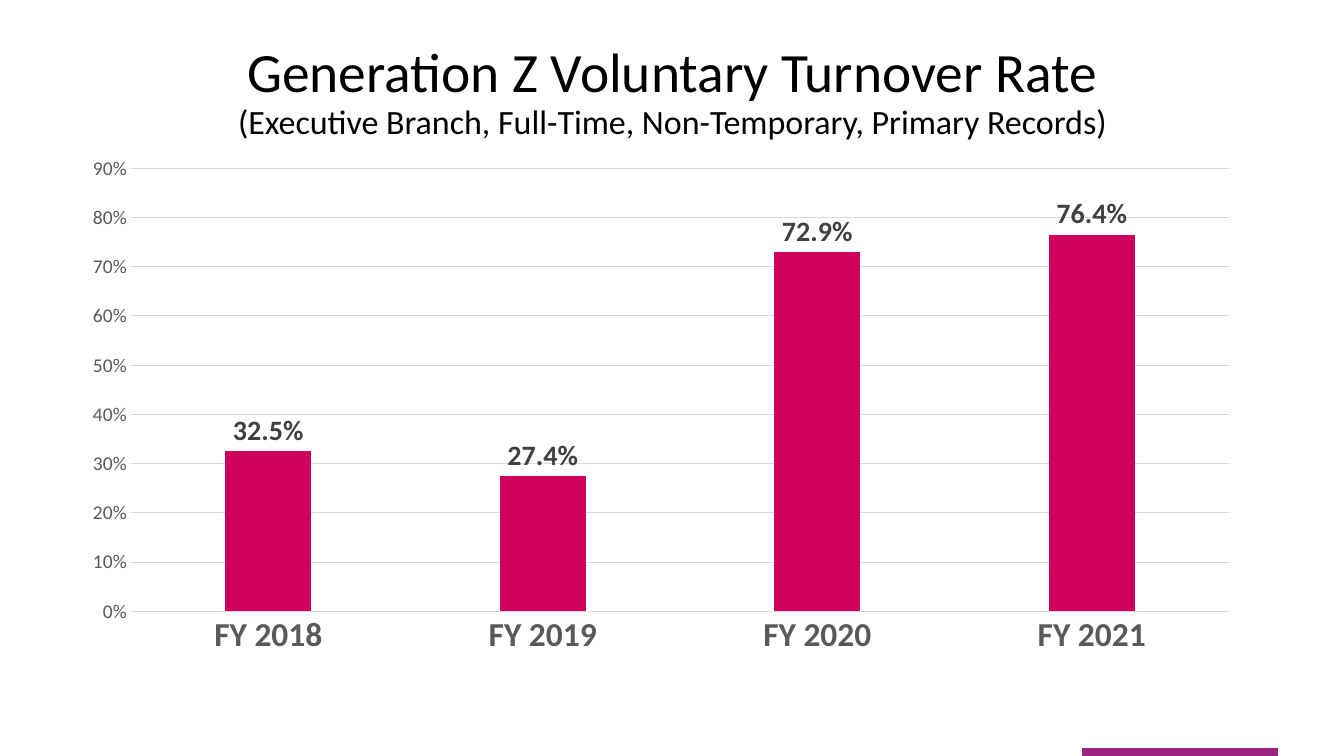
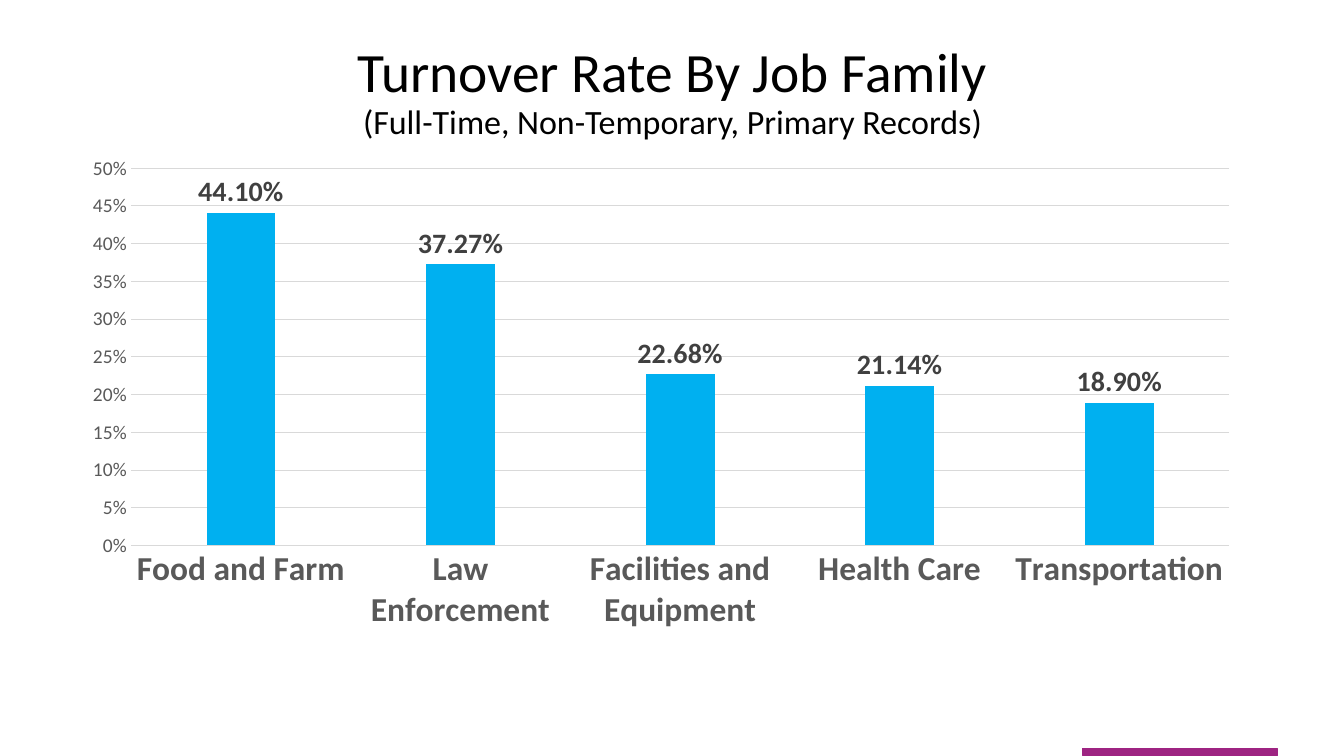
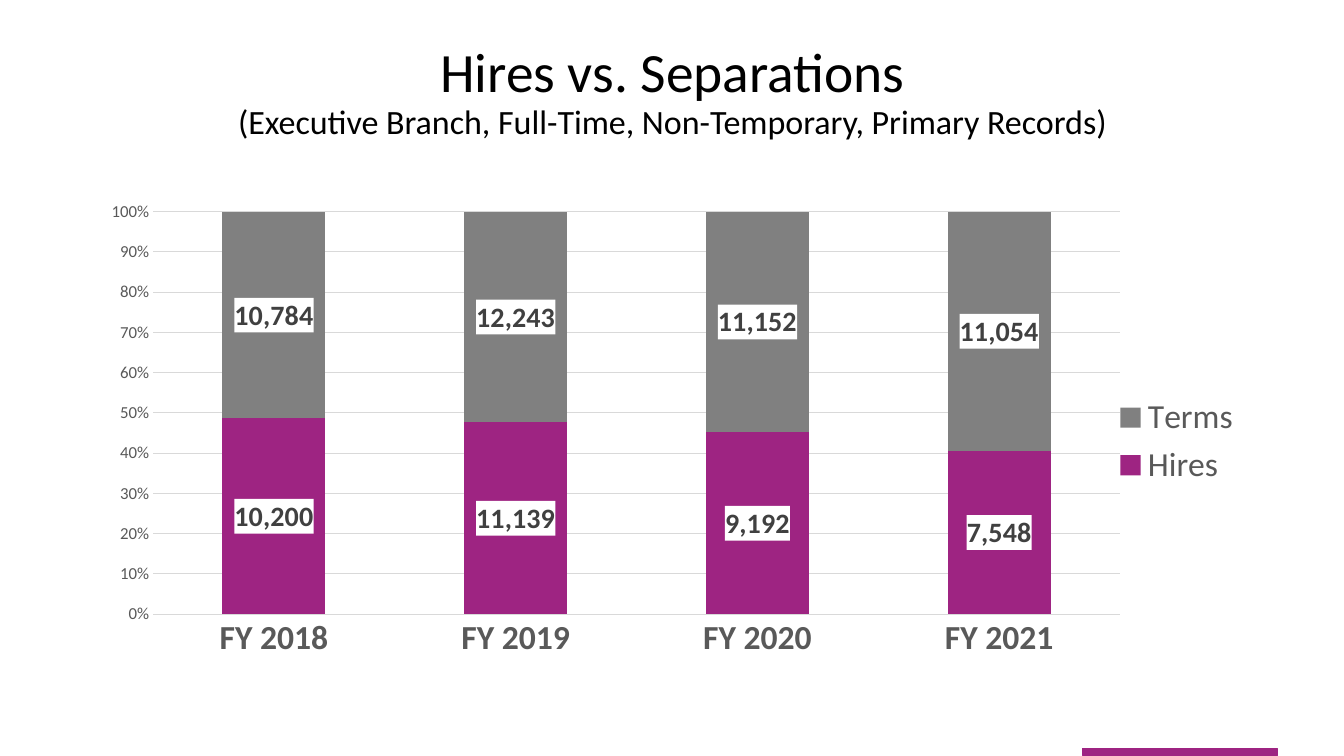
"""Build three turnover and hiring chart slides."""
from pptx import Presentation
from pptx.chart import data
from pptx.dml import color
from pptx.enum import chart as charts, shapes, text
from pptx.oxml import ns, parse_xml
from pptx.util import Inches, Pt

FONT = "Calibri"
BLACK = "000000"
WHITE = "FFFFFF"
PURPLE = "9E2482"
PINK = "CF005C"
BLUE = "00B0F0"
GRAY = "808080"
AXIS_TEXT = "595959"
LABEL_TEXT = "404040"
RULE = "D9D9D9"

ALL_RECORDS = "(Executive Branch, Full-Time, Non-Temporary, Primary Records)"
YEARS = [f"FY {year}" for year in range(2018, 2022)]
CLUSTERED = charts.XL_CHART_TYPE.COLUMN_CLUSTERED
STACKED = charts.XL_CHART_TYPE.COLUMN_STACKED_100

CHART_SLIDES = [
    dict(title="Generation Z Voluntary Turnover Rate", subtitle=ALL_RECORDS,
         kind=CLUSTERED, top=1.55, height=5.2, layout=(0.03, 0.02, 0.95, 0.848),
         categories=YEARS, series=[("Series 1", (0.325, 0.274, 0.729, 0.764), PINK)],
         label_format="0.0%", maximum=0.9, step=0.1, axis_size=14, gap=219, overlap=-27),
    dict(title="Turnover Rate By Job Family",
         subtitle="(Full-Time, Non-Temporary, Primary Records)",
         kind=CLUSTERED, top=1.55, height=5.2, layout=(0.03, 0.02, 0.95, 0.722),
         categories=["Food and Farm", "Law Enforcement", "Facilities and Equipment",
                     "Health Care", "Transportation"],
         series=[("Series 1", (0.441, 0.3727, 0.2268, 0.2114, 0.189), BLUE)],
         label_format="0.00%", maximum=0.5, step=0.05, axis_size=14, gap=219, overlap=-27),
    dict(title="Hires vs. Separations", subtitle=ALL_RECORDS,
         kind=STACKED, top=2, height=4.76, layout=(0.052, 0.021, 0.834, 0.839),
         categories=YEARS,
         series=[("Hires", (10200, 11139, 9192, 7548), PURPLE),
                 ("Terms", (10784, 12243, 11152, 11054), GRAY)],
         label_format="#,##0", maximum=1, step=0.1, axis_size=12, gap=135, overlap=100),
]


def rgb(value):
    return color.RGBColor.from_string(value)


def style_font(font, size, value, bold=False):
    font.name = FONT
    font.size = Pt(size)
    font.bold = bold
    font.color.rgb = rgb(value)


presentation = Presentation()
presentation.slide_width = Inches(13.33)
presentation.slide_height = Inches(7.5)

title_layout = presentation.slide_layouts.get_by_name("Title Only")
layout_title = title_layout.placeholders[0]
layout_title.left, layout_title.top = Inches(0.67), Inches(0.3)
layout_title.width, layout_title.height = Inches(12), Inches(1.25)

for content in CHART_SLIDES:
    slide = presentation.slides.add_slide(title_layout)

    band = slide.shapes.add_shape(shapes.MSO_SHAPE.RECTANGLE, Inches(10.74), Inches(7.43),
                                  Inches(1.93), Inches(0.07))
    band.shadow.inherit = False
    band.fill.solid()
    band.fill.fore_color.rgb = rgb(PURPLE)
    band.line.color.rgb = rgb(PURPLE)
    band.line.width = Pt(0.75)

    title_frame = slide.shapes.title.text_frame
    title_frame.text = content["title"] + "\v" + content["subtitle"]
    title_frame.auto_size = text.MSO_AUTO_SIZE.NONE
    title_frame.vertical_anchor = text.MSO_ANCHOR.MIDDLE
    paragraph = title_frame.paragraphs[0]
    paragraph.alignment = text.PP_ALIGN.CENTER
    paragraph.line_spacing = 0.9
    for run, size in zip(paragraph.runs, (39.6, 24.3)):
        style_font(run.font, size, BLACK)

    chart_data = data.CategoryChartData()
    chart_data.categories = content["categories"]
    for name, values, _ in content["series"]:
        chart_data.add_series(name, values, content["label_format"])
    chart = slide.shapes.add_chart(content["kind"], Inches(0.92), Inches(content["top"]),
                                   Inches(11.5), Inches(content["height"]), chart_data).chart
    style_font(chart.font, 10, BLACK)
    chart.has_title = False
    stacked = content["kind"] == STACKED
    chart.has_legend = stacked
    if stacked:
        chart.legend.position = charts.XL_LEGEND_POSITION.RIGHT
        chart.legend.include_in_layout = False
        style_font(chart.legend.font, 24, AXIS_TEXT)

    category_axis, value_axis = chart.category_axis, chart.value_axis
    for axis in (category_axis, value_axis):
        axis.major_tick_mark = axis.minor_tick_mark = charts.XL_TICK_MARK.NONE
    style_font(category_axis.tick_labels.font, 24, AXIS_TEXT, bold=True)
    style_font(value_axis.tick_labels.font, content["axis_size"], AXIS_TEXT)
    value_axis.tick_labels.number_format = "0%"
    value_axis.tick_labels.number_format_is_linked = False
    value_axis.minimum_scale = 0
    value_axis.maximum_scale = content["maximum"]
    value_axis.major_unit = content["step"]
    value_axis.format.line.fill.background()
    for line in (category_axis.format.line, value_axis.major_gridlines.format.line):
        line.color.rgb = rgb(RULE)
        line.width = Pt(0.75)

    plot = chart.plots[0]
    plot.vary_by_categories = False
    plot.gap_width = content["gap"]
    plot.overlap = content["overlap"]
    for series, (_, _, fill) in zip(plot.series, content["series"]):
        series.invert_if_negative = False
        series.format.fill.solid()
        series.format.fill.fore_color.rgb = rgb(fill)
        labels = series.data_labels
        labels.show_value = True
        labels.number_format = content["label_format"]
        labels.number_format_is_linked = False
        position = charts.XL_LABEL_POSITION
        labels.position = position.CENTER if stacked else position.OUTSIDE_END
        style_font(labels.font, 20, LABEL_TEXT, bold=True)
        if stacked:
            number_format = labels._element.find(ns.qn("c:numFmt"))
            number_format.addnext(parse_xml(
                f'<c:spPr {ns.nsdecls("c", "a")}><a:solidFill><a:srgbClr val="{WHITE}"/>'
                '</a:solidFill></c:spPr>'))

    plot_area = chart._chartSpace.xpath("c:chart/c:plotArea")[0]
    for old_layout in plot_area.findall(ns.qn("c:layout")):
        plot_area.remove(old_layout)
    bounds = "".join(f'<c:{tag} val="{value}"/>'
                     for tag, value in zip("xywh", content["layout"]))
    plot_area.insert(0, parse_xml(
        f'<c:layout {ns.nsdecls("c")}><c:manualLayout><c:layoutTarget val="inner"/>'
        f'<c:xMode val="edge"/><c:yMode val="edge"/>{bounds}</c:manualLayout></c:layout>'))

presentation.save("out.pptx")
